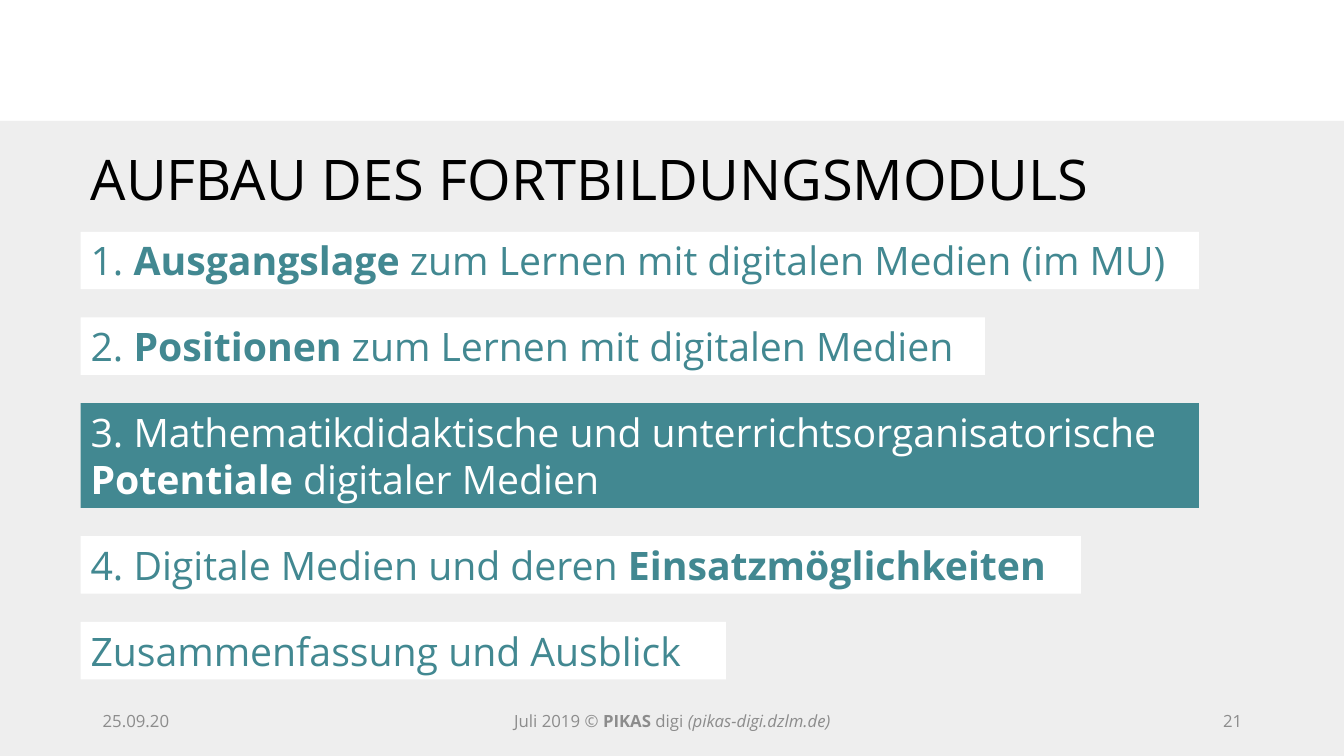
"""Build the agenda slide of a training module on digital media."""
from pptx import Presentation
from pptx.dml.color import RGBColor
from pptx.enum.shapes import MSO_SHAPE
from pptx.enum.text import MSO_ANCHOR, MSO_AUTO_SIZE, PP_ALIGN
from pptx.util import Pt

PX = 9144
FONT = "Open Sans"
TEAL = RGBColor(0x42, 0x88, 0x91)
WHITE = RGBColor(0xFF, 0xFF, 0xFF)
BLACK = RGBColor(0x00, 0x00, 0x00)
PALE = RGBColor(0xEE, 0xEE, 0xEE)
GRAY = RGBColor(0x8C, 0x8C, 0x8C)
RECTANGLE = MSO_SHAPE.RECTANGLE
TOP, MIDDLE = MSO_ANCHOR.TOP, MSO_ANCHOR.MIDDLE
LEFT, CENTER, RIGHT = PP_ALIGN.LEFT, PP_ALIGN.CENTER, PP_ALIGN.RIGHT
NO_FIT = MSO_AUTO_SIZE.NONE


def add_bar(left, top, width, height, color):
    """Add a plain filled rectangle."""
    bar = page.shapes.add_shape(RECTANGLE, left * PX, top * PX, width * PX, height * PX)
    bar.shadow.inherit = False
    bar.fill.solid()
    bar.fill.fore_color.rgb = color
    bar.line.fill.background()
    return bar


def write(box, spans, size, color, align=LEFT, anchor=TOP):
    """Fill a box with one paragraph of (text, style) spans."""
    frame = box.text_frame
    frame.word_wrap = True
    frame.auto_size = NO_FIT
    frame.vertical_anchor = anchor
    para = frame.paragraphs[0]
    para.alignment = align
    for text, style in spans:
        span = para.add_run()
        span.text = text
        span.font.name = FONT
        span.font.size = Pt(size)
        span.font.color.rgb = color
        span.font.bold = style == "bold"
        span.font.italic = style == "italic"


deck = Presentation()
deck.slide_width, deck.slide_height = 1333 * PX, 750 * PX
page = deck.slides.add_slide(deck.slide_layouts[5])

add_bar(0, 120, 1333, 630, PALE)

chapters = [
    (1109, 57, WHITE, TEAL, [("1. ", ""), ("Ausgangslage", "bold"),
                             (" zum Lernen mit digitalen Medien (im MU)", "")]),
    (897, 57, WHITE, TEAL, [("2. ", ""), ("Positionen", "bold"),
                            (" zum Lernen mit digitalen Medien", "")]),
    (1109, 104, TEAL, WHITE, [("3. Mathematikdidaktische und unterrichtsorganisatorische ", ""),
                              ("Potentiale", "bold"), (" digitaler Medien", "")]),
    (992, 57, WHITE, TEAL, [("4. Digitale Medien und deren ", ""),
                            ("Einsatzmöglichkeiten", "bold")]),
    (640, 57, WHITE, TEAL, [("Zusammenfassung und Ausblick", "")]),
]
top = 230
for width, height, fill, color, spans in chapters:
    write(add_bar(80, top, width, height, fill), spans, 28, color)
    top += height + 28

title = page.shapes.title
title.left, title.top, title.width, title.height = 80 * PX, 138 * PX, 1174 * PX, 77 * PX
write(title, [("AUFBAU DES FORTBILDUNGSMODULS", "")], 40, BLACK)
page.shapes._spTree.append(title._element)

footers = [
    (92, 300, LEFT, [("25.09.20", "")]),
    (442, 450, CENTER, [("Juli 2019 © ", ""), ("PIKAS", "bold"), (" digi ", ""),
                        ("(pikas-digi.dzlm.de)", "italic")]),
    (942, 300, RIGHT, [("21", "")]),
]
for left, width, align, spans in footers:
    box = page.shapes.add_textbox(left * PX, 695 * PX, width * PX, 40 * PX)
    write(box, spans, 12, GRAY, align, MIDDLE)

deck.save("out.pptx")
